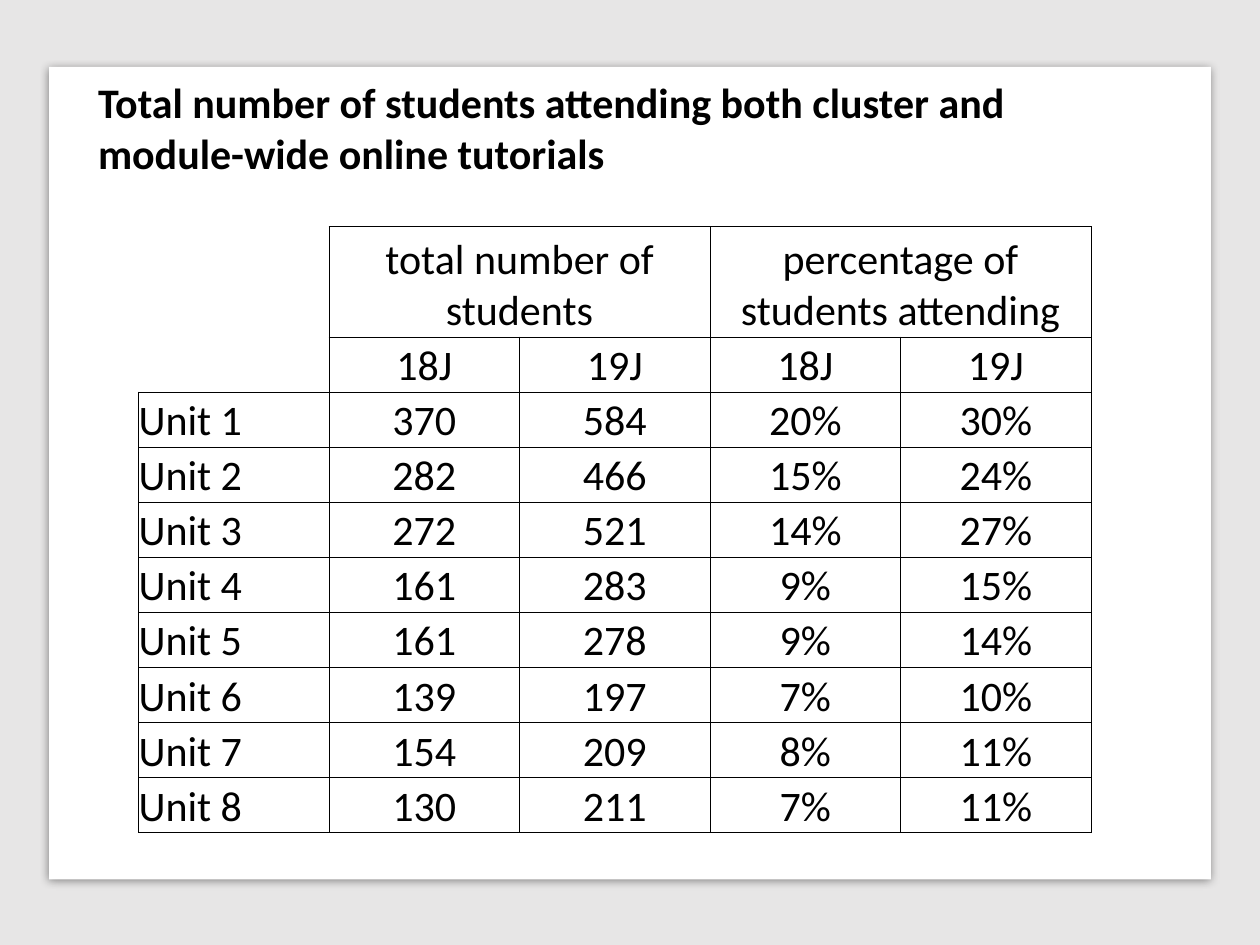
from dataclasses import dataclass

from lxml.etree import SubElement
from pptx import Presentation
from pptx.dml.color import RGBColor
from pptx.enum.shapes import MSO_SHAPE as Shape
from pptx.enum.text import MSO_ANCHOR as Anchor, MSO_AUTO_SIZE as AutoSize, PP_ALIGN as Align
from pptx.oxml.ns import qn
from pptx.util import Inches, Pt


@dataclass(frozen=True)
class Theme:
    """Colours, font and sizes of the slide."""
    backdrop: str = "E7E6E6"
    paper: str = "FFFFFF"
    ink: str = "000000"
    font: str = "Calibri"
    text_size: float = 24
    rule_width: float = 0.5


@dataclass(frozen=True)
class Box:
    """A region measured in columns and rows of the slide grid."""
    left: float
    top: float
    width: float
    height: float

    def place(self):
        """Return the region as four lengths."""
        return [Inches(side * CELL) for side in (self.left, self.top, self.width, self.height)]


THEME = Theme()
CELL = 0.1
COLUMNS, ROWS = 100, 75
TITLE = "Total number of students attending both cluster and\nmodule-wide online tutorials"
GROUPS = ["", "total number of students", "", "percentage of students attending", ""]
YEARS = ["", "18J", "19J", "18J", "19J"]
ATTENDANCE = [
    (370, 584, 20, 30),
    (282, 466, 15, 24),
    (272, 521, 14, 27),
    (161, 283, 9, 15),
    (161, 278, 9, 14),
    (139, 197, 7, 10),
    (154, 209, 8, 11),
    (130, 211, 7, 11),
]


def style_text(frame, align, bold=False):
    """Give every paragraph of a frame the slide's type."""
    for para in frame.paragraphs:
        para.alignment = align
        for span in para.runs:
            span.font.name = THEME.font
            span.font.size = Pt(THEME.text_size)
            span.font.bold = bold
            span.font.color.rgb = RGBColor.from_string(THEME.ink)


def add_panel(page, box, colour):
    """Add a plain filled rectangle."""
    panel = page.shapes.add_shape(Shape.RECTANGLE, *box.place())
    panel.fill.solid()
    panel.fill.fore_color.rgb = RGBColor.from_string(colour)
    panel.line.fill.background()
    panel.shadow.inherit = False
    return panel


def add_paper(page, box):
    """Add the white sheet with its soft shadow."""
    paper = add_panel(page, box, THEME.paper)
    effects = paper._element.spPr.find(qn("a:effectLst"))
    shadow = SubElement(effects, qn("a:outerShdw"), blurRad=str(Pt(5)), dist=str(Pt(1.4)),
                        dir="5400000", algn="t", rotWithShape="0")
    colour = SubElement(shadow, qn("a:srgbClr"), val=THEME.ink)
    SubElement(colour, qn("a:alpha"), val="43000")


def add_title(page, box):
    """Add the two-line heading."""
    frame = page.shapes.add_textbox(*box.place()).text_frame
    frame.word_wrap = False
    frame.auto_size = AutoSize.SHAPE_TO_FIT_TEXT
    frame.text = TITLE
    style_text(frame, Align.LEFT, bold=True)


def rule_cell(cell, sides):
    """Draw the named sides of a cell and clear the others."""
    properties = cell._tc.get_or_add_tcPr()
    for side in "LRTB":
        line = SubElement(properties, qn(f"a:ln{side}"), w=str(Pt(THEME.rule_width)))
        if side in sides:
            fill = SubElement(line, qn("a:solidFill"))
            SubElement(fill, qn("a:srgbClr"), val=THEME.ink)
        else:
            SubElement(line, qn("a:noFill"))
    cell.fill.background()


def fill_cell(cell, text, align):
    """Write a cell's text at its foot, without insets."""
    cell.margin_left = cell.margin_right = cell.margin_top = cell.margin_bottom = 0
    cell.vertical_anchor = Anchor.BOTTOM
    cell.text_frame.text = text
    style_text(cell.text_frame, align)


def add_attendance_table(page, box):
    """Add the table, whose first row is twice as high as the others."""
    units = [
        [f"Unit {number}", str(old), str(new), f"{old_share}%", f"{new_share}%"]
        for number, (old, new, old_share, new_share) in enumerate(ATTENDANCE, 1)
    ]
    records = [GROUPS, YEARS, *units]
    left, top, width, height = box.place()
    table = page.shapes.add_table(len(records), len(YEARS), left, top, width, height).table
    table.first_row = table.horz_banding = False
    for column in table.columns:
        column.width = width // len(YEARS)
    for index, row in enumerate(table.rows):
        row.height = height // (len(records) + 1) * (2 if index == 0 else 1)
    for first in (1, 3):
        table.cell(0, first).merge(table.cell(0, first + 1))
    corner_sides = {(0, 0): "R", (1, 0): "RB"}
    for row, record in enumerate(records):
        for column, text in enumerate(record):
            cell = table.cell(row, column)
            fill_cell(cell, text, Align.CENTER if column else Align.LEFT)
            rule_cell(cell, corner_sides.get((row, column), "LRTB"))


def build_attendance_slide(deck, box):
    """Lay out the whole slide inside the given box."""
    page = deck.slides.add_slide(deck.slide_layouts[6])
    add_panel(page, box, THEME.backdrop)
    paper = Box(box.left + 3.9, box.top + 5.3, box.width - 7.8, box.height - 10.5)
    add_paper(page, paper)
    add_title(page, Box(paper.left + 2.9, paper.top + 0.3, 75.6, 9.1))
    add_attendance_table(page, Box(paper.left + 7.1, paper.top + 12.7, 75.6, 48.1))


def main():
    """Build and save the deck."""
    deck = Presentation()
    deck.slide_width, deck.slide_height = Inches(COLUMNS * CELL), Inches(ROWS * CELL)
    build_attendance_slide(deck, Box(0, 0, COLUMNS, ROWS))
    deck.save("out.pptx")


if __name__ == "__main__":
    main()
